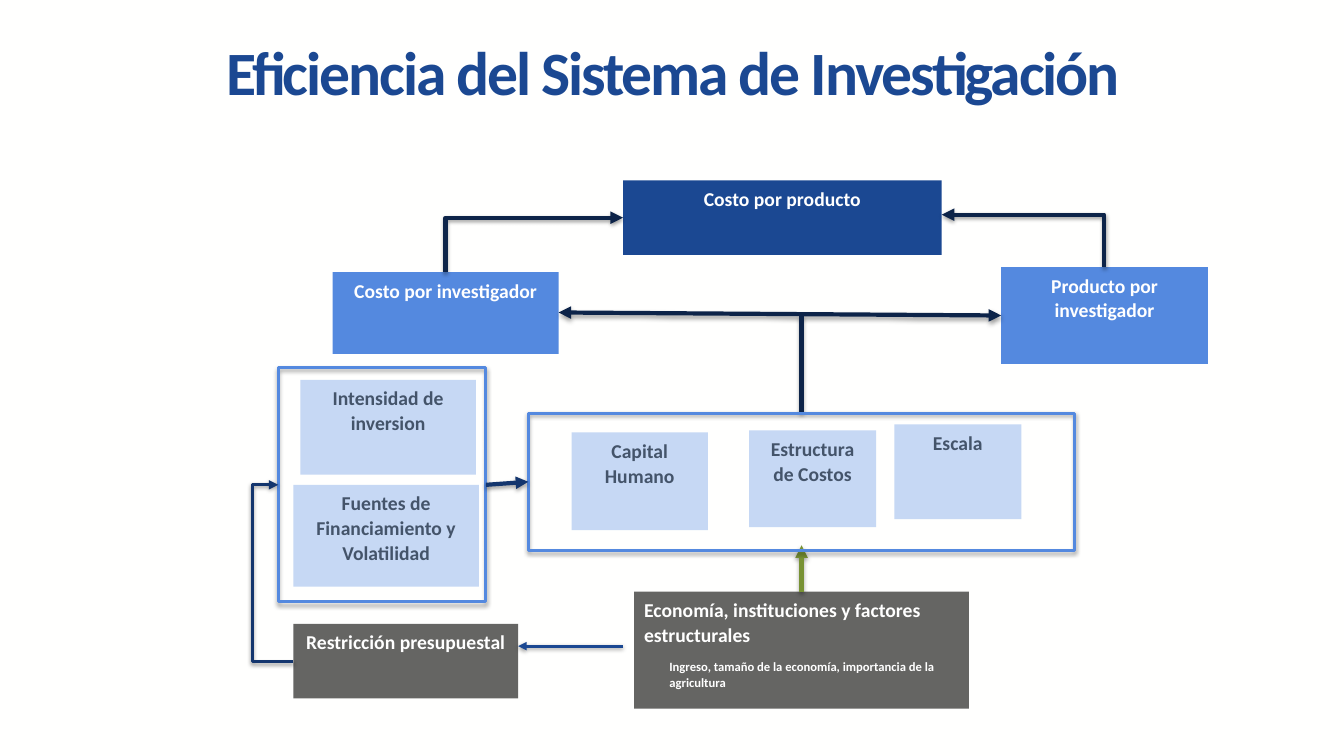
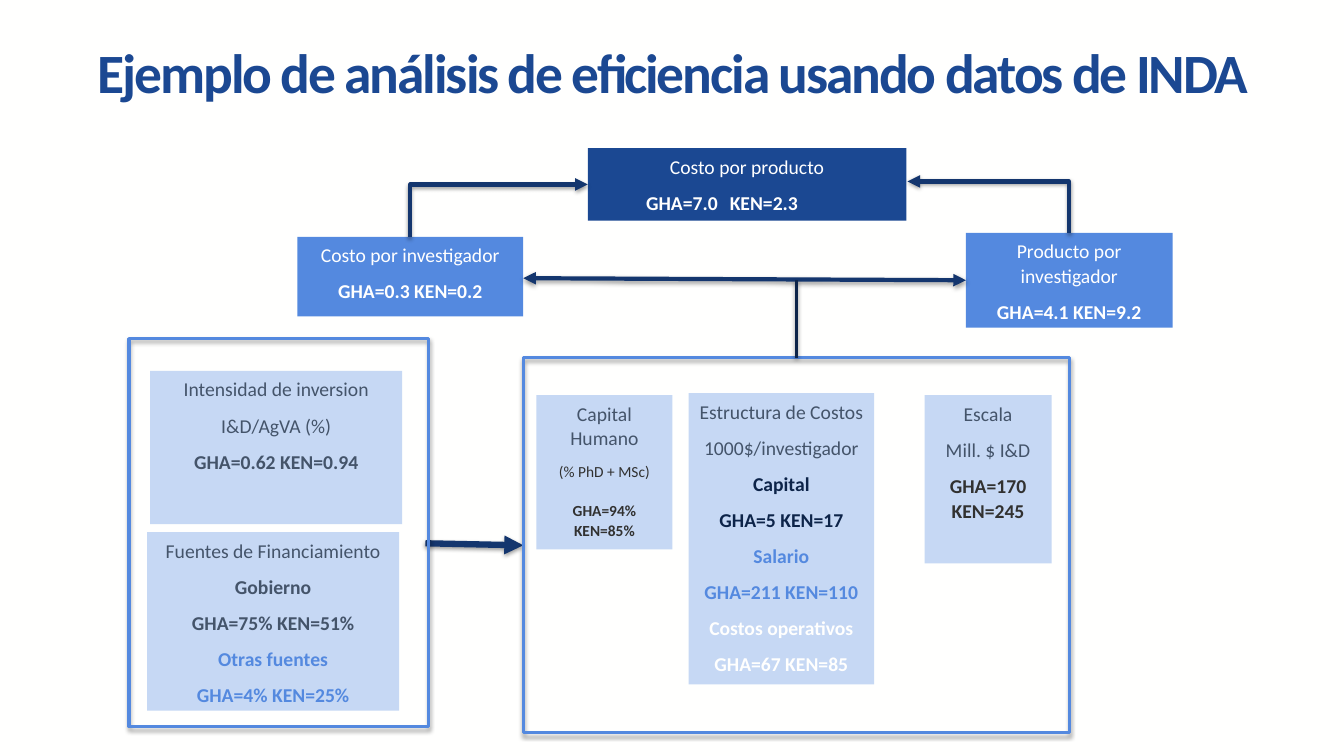
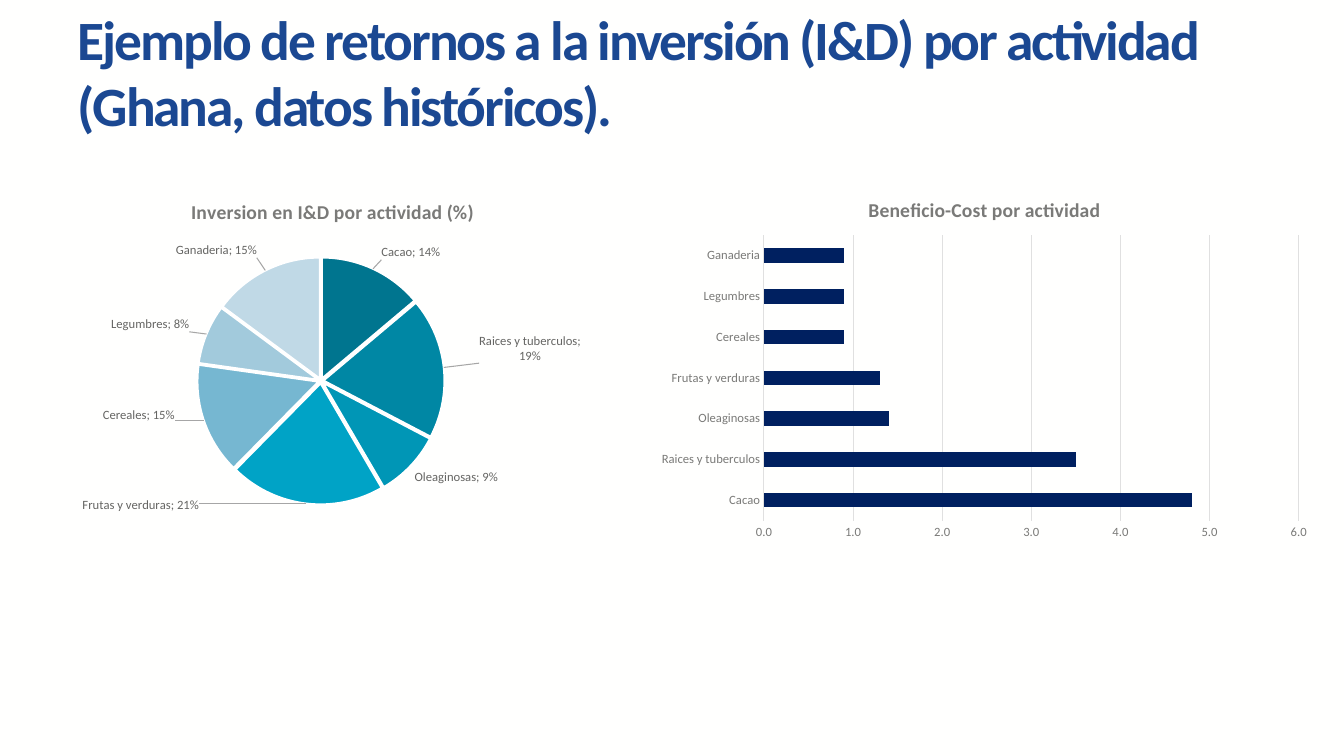
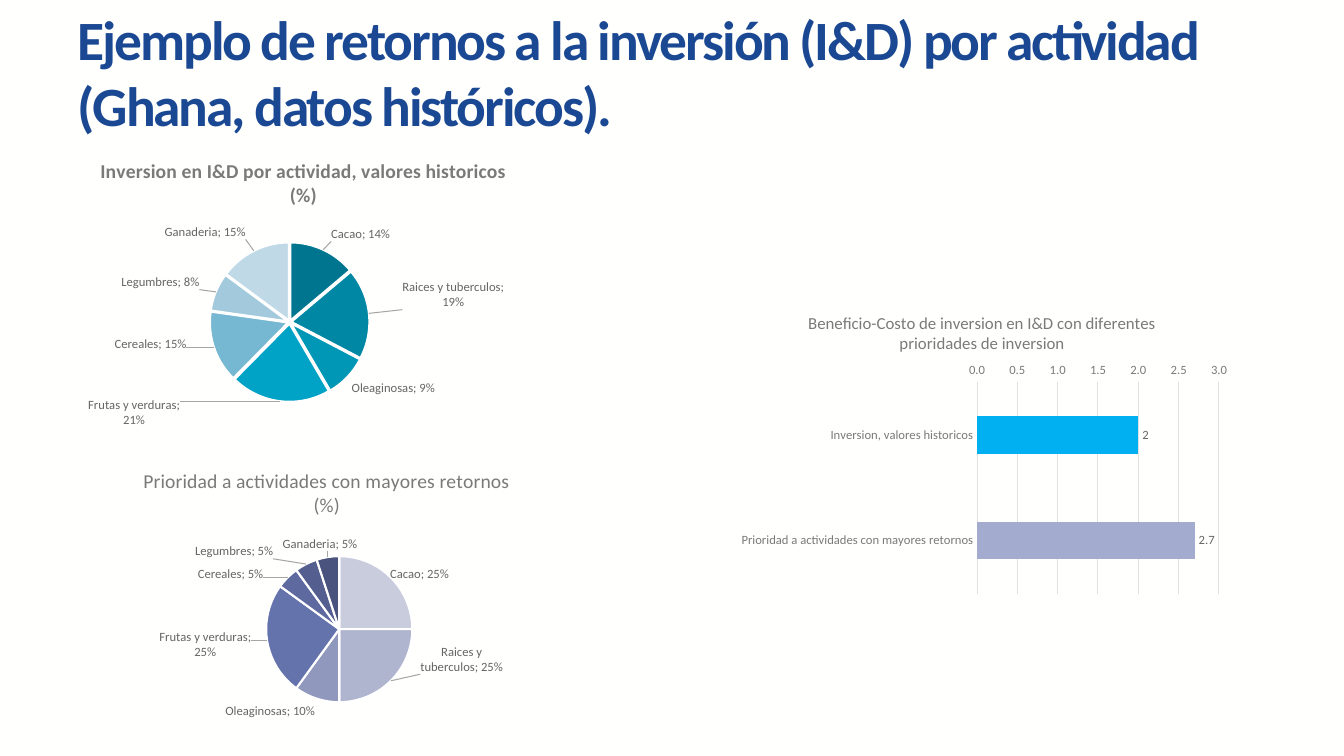
import copy
import dataclasses

import lxml.etree
import pptx
import pptx.chart.data
import pptx.dml.color
import pptx.enum.chart
import pptx.enum.shapes
import pptx.enum.text
import pptx.oxml.ns
import pptx.util

Inches = pptx.util.Inches
Pt = pptx.util.Pt
qn = pptx.oxml.ns.qn
Align = pptx.enum.text.PP_ALIGN


@dataclasses.dataclass(frozen=True)
class Theme:
    font: str = "Calibri"
    paper: str = "FFFFFE"
    white: str = "FFFFFF"
    navy: str = "1B4892"
    blue: str = "5489DF"
    pale: str = "C6D8F4"
    slate: str = "44546A"
    grey: str = "656563"
    ink: str = "313130"
    arrow: str = "14366E"
    dark_arrow: str = "0D2449"
    green: str = "789234"
    chart_text: str = "7A7A78"
    grid: str = "E0E0E0"
    leader: str = "A6A6A6"
    bar: str = "002060"
    bright_bar: str = "00B0F0"
    soft_bar: str = "A3ABCE"
    teals: tuple = ("00758F", "0087A4", "0096B6", "00A3C6", "76B7D1", "A2CADC", "C0D9E6")
    purples: tuple = ("C9CCDD", "B0B5CF", "9098BE", "6573AD", "5D699F", "545F8F", "49537D")
    title_size: float = 44
    long_title_size: float = 39.6
    body_size: float = 14
    detail_size: float = 11
    small_size: float = 9
    chart_title_size: float = 14


THEME = Theme()

ACTIVITIES = ("Cacao", "Raices y tuberculos", "Oleaginosas", "Frutas y verduras",
              "Cereales", "Legumbres", "Ganaderia")
HISTORIC_SHARES = (0.14, 0.19, 0.09, 0.21, 0.15, 0.08, 0.15)
PRIORITY_SHARES = (0.25, 0.25, 0.1, 0.25, 0.05, 0.05, 0.05)
BENEFIT_COST = (4.8, 3.5, 1.4, 1.3, 0.9, 0.9, 0.9)
# Label shifts, as fractions of the chart's width and height
HISTORIC_SHIFTS = {0: (0.01, -0.01), 1: (0.05, -0.01), 3: (-0.18, -0.03),
                   4: (-0.04, -0.04), 5: (-0.02, 0), 6: (-0.01, -0.02)}
PRIORITY_SHIFTS = {0: (-0.01, 0.03), 1: (0.05, -0.14), 3: (-0.02, -0.04),
                   4: (-0.04, 0.03), 5: (-0.06, 0), 6: (0.06, 0)}
RETURNS_TITLE = "Ejemplo de retornos a la inversión (I&D) por actividad (Ghana, datos históricos)."


# Text and XML helpers
def rgb(colour):
    return pptx.dml.color.RGBColor.from_string(colour)


def add_xml(parent, tag, **attributes):
    element = lxml.etree.SubElement(parent, qn(tag))
    for name, value in attributes.items():
        element.set(name, str(value))
    return element


def format_font(font, size, colour, bold=False):
    font.name = THEME.font
    font.size = Pt(size)
    font.bold = bold
    font.color.rgb = rgb(colour)


def write_text(paragraph, text, *, size=THEME.body_size, colour=THEME.white, bold=False,
               align=Align.CENTER, line_spacing=1.06, after=8, indent=0, first_line=0,
               tracking=None):
    paragraph.alignment = align
    paragraph.line_spacing = line_spacing
    paragraph.space_before = Pt(0)
    paragraph.space_after = Pt(after)
    if indent:
        properties = paragraph._p.get_or_add_pPr()
        properties.set("marL", str(Inches(indent)))
        properties.set("indent", str(Inches(first_line)))
    run = paragraph.add_run()
    run.text = text
    format_font(run.font, size, colour, bold)
    if tracking:
        run._r.get_or_add_rPr().set("spc", str(int(tracking * 100)))


def line(text, **text_format):
    return text, text_format


def pair(ghana, kenya, gap=" "):
    return f"GHA={ghana}{gap}KEN={kenya}"


def cast_shadow(shape, opacity=38, distance=1.6):
    properties = shape._element.spPr
    effects = properties.find(qn("a:effectLst"))
    if effects is None:
        effects = add_xml(properties, "a:effectLst")
    shadow = add_xml(effects, "a:outerShdw", blurRad=Pt(3.1), dist=Pt(distance),
                     dir=5400000, rotWithShape=0)
    add_xml(add_xml(shadow, "a:srgbClr", val="000000"), "a:alpha", val=opacity * 1000)


# Slide elements
def add_titled_slide(presentation, text, size=THEME.long_title_size, align=Align.LEFT):
    slide = presentation.slides.add_slide(presentation.slide_layouts[5])
    title = slide.shapes.title
    title.left, title.top, title.width, title.height = map(Inches, (0.67, 0.17, 12.01, 1.07))
    frame = title.text_frame
    frame.word_wrap = True
    frame.auto_size = pptx.enum.text.MSO_AUTO_SIZE.NONE
    frame.vertical_anchor = pptx.enum.text.MSO_ANCHOR.MIDDLE
    write_text(frame.paragraphs[0], text, size=size, colour=THEME.navy, bold=True,
               align=align, line_spacing=1.0, after=0, tracking=-1.5)
    return slide


def add_rectangle(slide, place):
    shape = slide.shapes.add_shape(pptx.enum.shapes.MSO_SHAPE.RECTANGLE, *map(Inches, place))
    shape.shadow.inherit = False
    return shape


def add_box(slide, place, fill, lines, **text_format):
    box = add_rectangle(slide, place)
    box.fill.solid()
    box.fill.fore_color.rgb = rgb(fill)
    box.line.fill.background()
    frame = box.text_frame
    frame.word_wrap = True
    frame.vertical_anchor = pptx.enum.text.MSO_ANCHOR.TOP
    for number, (text, own_format) in enumerate(lines):
        paragraph = frame.add_paragraph() if number else frame.paragraphs[0]
        write_text(paragraph, text, **{**text_format, **own_format})


def add_frame(slide, place):
    frame = add_rectangle(slide, place)
    frame.fill.background()
    frame.line.color.rgb = rgb(THEME.blue)
    frame.line.width = Pt(2.25)
    cast_shadow(frame, 35, 1.8)


def add_arrow(slide, start, end, colour=THEME.arrow, width=3, ends=("tailEnd",),
              preset="line", bend=None):
    """Draw a connector; preset names its route and bend places its middle leg."""
    connector = slide.shapes.add_connector(pptx.enum.shapes.MSO_CONNECTOR.STRAIGHT,
                                           *map(Inches, (*start, *end)))
    connector.line.color.rgb = rgb(colour)
    connector.line.width = Pt(width)
    outline = connector.line._get_or_add_ln()
    for end_name in ends:
        add_xml(outline, f"a:{end_name}", type="triangle")
    geometry = connector._element.spPr.find(qn("a:prstGeom"))
    geometry.set("prst", preset)
    if bend is not None:
        guides = geometry.find(qn("a:avLst"))
        if guides is None:
            guides = add_xml(geometry, "a:avLst")
        add_xml(guides, "a:gd", name="adj1", fmla=f"val {round(bend * 100000)}")
    cast_shadow(connector)


def add_corner_arrow(slide, target, source, colour):
    add_arrow(slide, target, source, colour, ends=("headEnd",), preset="bentConnector2")


# Charts
def add_chart(slide, kind, place, plot_area, categories, values, title, *,
              title_size=THEME.chart_title_size, bold=False):
    data = pptx.chart.data.CategoryChartData()
    data.categories = categories
    data.add_series("Series 1", values)
    chart = slide.shapes.add_chart(kind, *map(Inches, place), data).chart
    format_font(chart.font, 10, THEME.ink)
    chart.has_legend = False
    chart.has_title = True
    write_text(chart.chart_title.text_frame.paragraphs[0], title, size=title_size,
               colour=THEME.chart_text, bold=bold, line_spacing=1.0, after=0)
    # Place the plot inside the chart
    plot_element = chart._chartSpace.chart.plotArea
    layout = plot_element.find(qn("c:layout"))
    if layout is None:
        layout = lxml.etree.Element(qn("c:layout"))
        plot_element.insert(0, layout)
    manual = add_xml(layout, "c:manualLayout")
    add_xml(manual, "c:layoutTarget", val="inner")
    for name in ("xMode", "yMode"):
        add_xml(manual, f"c:{name}", val="edge")
    for name, value in zip("xywh", plot_area):
        add_xml(manual, f"c:{name}", val=value)
    return chart


def colour_point(series, index, colour):
    fill = series.points[index].format.fill
    fill.solid()
    fill.fore_color.rgb = rgb(colour)


def show_labels(series, number_format):
    labels = series.data_labels
    format_font(labels.font, THEME.small_size, THEME.grey)
    labels.show_value = True
    labels.number_format = number_format
    labels.number_format_is_linked = False
    labels.position = pptx.enum.chart.XL_LABEL_POSITION.OUTSIDE_END
    return labels


def shift_labels(labels, shifts):
    """Move single labels and draw leader lines to them."""
    element = labels._element
    leader_switch = element.find(qn("c:showLeaderLines"))
    if leader_switch is None:
        leader_switch = add_xml(element, "c:showLeaderLines")
    leader_switch.set("val", "1")
    separator = lxml.etree.Element(qn("c:separator"))
    separator.text = "; "
    leader_switch.addprevious(separator)
    shared = [child for child in element if child is not leader_switch]
    for position, (index, shift) in enumerate(shifts.items()):
        label = lxml.etree.Element(qn("c:dLbl"))
        add_xml(label, "c:idx", val=index)
        manual = add_xml(add_xml(label, "c:layout"), "c:manualLayout")
        for name, value in zip("xy", shift):
            add_xml(manual, f"c:{name}", val=value)
        label.extend(copy.deepcopy(child) for child in shared)
        element.insert(position, label)
    leader_format = add_xml(add_xml(element, "c:leaderLines"), "c:spPr")
    outline = add_xml(leader_format, "a:ln", w=Pt(0.75))
    add_xml(add_xml(outline, "a:solidFill"), "a:srgbClr", val=THEME.leader)


def add_pie(slide, place, plot_area, values, title, colours, shifts, explosion=0, bold=False):
    chart = add_chart(slide, pptx.enum.chart.XL_CHART_TYPE.PIE, place, plot_area,
                      ACTIVITIES, values, title, bold=bold)
    series = chart.plots[0].series[0]
    series.format.line.color.rgb = rgb(THEME.white)
    if explosion:
        element = lxml.etree.Element(qn("c:explosion"))
        element.set("val", str(explosion))
        series._element.find(qn("c:spPr")).addnext(element)
    for index, colour in enumerate(colours):
        colour_point(series, index, colour)
        border = series.points[index].format.line
        border.color.rgb = rgb(THEME.white)
        border.width = Pt(1.5)
    labels = show_labels(series, "0%")
    labels.show_category_name = True
    shift_labels(labels, shifts)


def add_bars(slide, place, plot_area, categories, values, title, colour, maximum, step,
             **title_format):
    chart = add_chart(slide, pptx.enum.chart.XL_CHART_TYPE.BAR_CLUSTERED, place, plot_area,
                      categories, values, title, **title_format)
    plot = chart.plots[0]
    plot.gap_width = 182
    plot.vary_by_categories = False
    series = plot.series[0]
    series.format.fill.solid()
    series.format.fill.fore_color.rgb = rgb(colour)
    category_axis, value_axis = chart.category_axis, chart.value_axis
    for axis in (category_axis, value_axis):
        format_font(axis.tick_labels.font, THEME.small_size, THEME.chart_text)
        axis.major_tick_mark = pptx.enum.chart.XL_TICK_MARK.NONE
        axis.minor_tick_mark = pptx.enum.chart.XL_TICK_MARK.NONE
    category_axis.has_major_gridlines = False
    value_axis.has_major_gridlines = True
    for grid_line in (category_axis.format.line, value_axis.major_gridlines.format.line):
        grid_line.color.rgb = rgb(THEME.grid)
        grid_line.width = Pt(0.75)
    value_axis.format.line.fill.background()
    value_axis.minimum_scale = 0
    value_axis.maximum_scale = maximum
    value_axis.major_unit = step
    value_axis.tick_labels.number_format = "0.0"
    value_axis.tick_labels.number_format_is_linked = False
    return chart


# Slides
def build_system_slide(presentation):
    slide = add_titled_slide(presentation, "Eficiencia del Sistema de Investigación",
                             THEME.title_size, Align.CENTER)
    for place, fill, colour, text in (
            ((6.18, 1.79, 3.16, 0.74), THEME.navy, THEME.white, "Costo por producto"),
            ((3.3, 2.7, 2.24, 0.81), THEME.blue, THEME.white, "Costo por investigador"),
            ((9.93, 2.65, 2.05, 0.96), THEME.blue, THEME.white, "Producto por investigador"),
            ((2.98, 3.77, 1.74, 0.94), THEME.pale, THEME.slate, "Intensidad de inversion"),
            ((2.91, 4.81, 1.84, 1.01), THEME.pale, THEME.slate,
             "Fuentes de Financiamiento y Volatilidad"),
            ((5.67, 4.29, 1.35, 0.97), THEME.pale, THEME.slate, "Capital Humano"),
            ((7.43, 4.27, 1.26, 0.96), THEME.pale, THEME.slate, "Estructura de Costos"),
            ((8.87, 4.21, 1.26, 0.94), THEME.pale, THEME.slate, "Escala"),
            ((2.91, 6.19, 2.23, 0.74), THEME.grey, THEME.white, "Restricción presupuestal")):
        add_box(slide, place, fill, [line(text)], colour=colour, bold=True)
    add_box(slide, (6.29, 5.87, 3.32, 1.16), THEME.grey, [
        line("Economía, instituciones y factores estructurales"),
        line("Ingreso, tamaño de la economía, importancia de la agricultura",
             size=THEME.small_size, indent=0.25, after=0),
    ], bold=True, align=Align.LEFT)

    # Arrows and the frames they join
    add_corner_arrow(slide, (6.18, 2.16), (4.42, 2.7), THEME.dark_arrow)
    add_corner_arrow(slide, (9.34, 2.13), (10.95, 2.65), THEME.dark_arrow)
    add_arrow(slide, (7.95, 5.87), (7.95, 5.41), THEME.green)
    add_arrow(slide, (6.18, 6.41), (5.14, 6.41), THEME.navy, 2)
    add_arrow(slide, (5.54, 3.1), (9.93, 3.13), THEME.dark_arrow, ends=("headEnd", "tailEnd"))
    add_arrow(slide, (7.95, 4.1), (7.95, 3.13), THEME.dark_arrow, ends=())
    add_frame(slide, (5.24, 4.1, 5.42, 1.36))
    add_frame(slide, (2.76, 3.65, 2.06, 2.32))
    add_arrow(slide, (2.91, 6.56), (2.76, 4.81), width=2.25, preset="bentConnector3", bend=2.72)
    add_arrow(slide, (4.82, 4.81), (5.24, 4.78))


def build_example_slide(presentation):
    slide = add_titled_slide(presentation,
                             "Ejemplo de análisis de eficiencia usando datos de INDA",
                             align=Align.CENTER)
    # Results
    add_box(slide, (5.83, 1.47, 3.16, 0.72), THEME.navy, [
        line("Costo por producto"),
        line(pair("7.0", "2.3", "\t"), bold=True, align=Align.LEFT, indent=0.81,
             first_line=-0.33)])
    add_box(slide, (2.95, 2.35, 2.24, 0.79), THEME.blue, [
        line("Costo por investigador"), line(pair("0.3", "0.2"), bold=True)])
    add_box(slide, (9.58, 2.31, 2.05, 0.94), THEME.blue, [
        line("Producto por investigador"), line(pair("4.1", "9.2"), bold=True)])

    # Causes
    strong = {"bold": True}
    blue = {"bold": True, "colour": THEME.blue}
    dark = {"bold": True, "colour": THEME.dark_arrow}
    light = {"bold": True, "colour": THEME.paper}
    detail = {"size": THEME.detail_size, "colour": THEME.ink}
    for place, lines in (
            ((1.49, 3.68, 2.5, 1.52), [
                line("Intensidad de inversion"), line("I&D/AgVA (%)"),
                line(pair("0.62", "0.94"), **strong)]),
            ((1.46, 5.28, 2.5, 1.77), [
                line("Fuentes de Financiamiento"), line("Gobierno", **strong),
                line(pair("75%", "51%"), **strong), line("Otras fuentes", **blue),
                line(pair("4%", "25%"), **blue)]),
            ((5.32, 3.92, 1.35, 1.53), [
                line("Capital Humano"), line("(% PhD + MSc)", after=14, **detail),
                line(pair("94%", "85%"), bold=True, after=0, **detail)]),
            ((6.83, 3.9, 1.84, 2.89), [
                line("Estructura de Costos"), line("1000$/investigador"),
                line("Capital", **dark), line(pair("5", "17"), **dark),
                line("Salario", **blue), line(pair("211", "110"), **blue),
                line("Costos operativos", **light), line(pair("67", "85"), **light)]),
            ((9.17, 3.92, 1.26, 1.67), [
                line("Escala"), line("Mill. $ I&D"),
                line(pair("170", "245"), bold=True, colour=THEME.ink)])):
        add_box(slide, place, THEME.pale, lines, colour=THEME.slate)

    # Arrows and frames
    add_corner_arrow(slide, (5.83, 1.83), (4.07, 2.35), THEME.arrow)
    add_corner_arrow(slide, (9, 1.8), (10.6, 2.31), THEME.arrow)
    add_arrow(slide, (5.19, 2.76), (9.58, 2.78), ends=("headEnd", "tailEnd"))
    add_arrow(slide, (4.22, 5.39), (5.19, 5.41), width=4.5)
    add_frame(slide, (1.28, 3.36, 2.97, 3.85))
    add_frame(slide, (5.19, 3.55, 5.42, 3.72))
    add_arrow(slide, (7.9, 3.55), (7.9, 2.78), THEME.dark_arrow, 2.25, ends=())


def build_returns_slide(presentation):
    slide = add_titled_slide(presentation, RETURNS_TITLE)
    add_pie(slide, (0.38, 1.8, 5.84, 3.7), (0.27, 0.2, 0.42, 0.67), HISTORIC_SHARES,
            "Inversion en I&D por actividad (%)", THEME.teals, HISTORIC_SHIFTS,
            explosion=2, bold=True)
    add_bars(slide, (6.45, 1.79, 6.63, 3.63), (0.17, 0.15, 0.8, 0.78), ACTIVITIES,
             BENEFIT_COST, "Beneficio-Cost por actividad", THEME.bar, 6, 1, bold=True)


def build_priorities_slide(presentation):
    slide = add_titled_slide(presentation, RETURNS_TITLE)
    add_pie(slide, (0.28, 1.41, 5.46, 3.08), (0.33, 0.32, 0.29, 0.52), HISTORIC_SHARES,
            "Inversion en I&D por actividad, valores historicos (%)", THEME.teals,
            HISTORIC_SHIFTS, explosion=2, bold=True)
    add_pie(slide, (0.74, 4.49, 5, 2.85), (0.38, 0.36, 0.29, 0.51), PRIORITY_SHARES,
            "Prioridad a actividades con mayores retornos (%)", THEME.purples,
            PRIORITY_SHIFTS)
    chart = add_bars(slide, (7.24, 2.95, 5, 3), (0.49, 0.28, 0.48, 0.7),
                     ("Inversion, valores historicos",
                      "Prioridad a actividades con mayores retornos"), (2, 2.7),
                     "Beneficio-Costo de inversion en I&D con diferentes prioridades de inversion",
                     THEME.bright_bar, 3, 0.5, title_size=12)
    chart.category_axis.reverse_order = True
    series = chart.plots[0].series[0]
    colour_point(series, 1, THEME.soft_bar)
    show_labels(series, "General")


def main():
    presentation = pptx.Presentation()
    presentation.slide_width = Inches(13.33)
    presentation.slide_height = Inches(7.5)
    background = presentation.slide_master.background.fill
    background.solid()
    background.fore_color.rgb = rgb(THEME.paper)
    build_system_slide(presentation)
    build_example_slide(presentation)
    build_returns_slide(presentation)
    build_priorities_slide(presentation)
    presentation.save("out.pptx")


if __name__ == "__main__":
    main()
